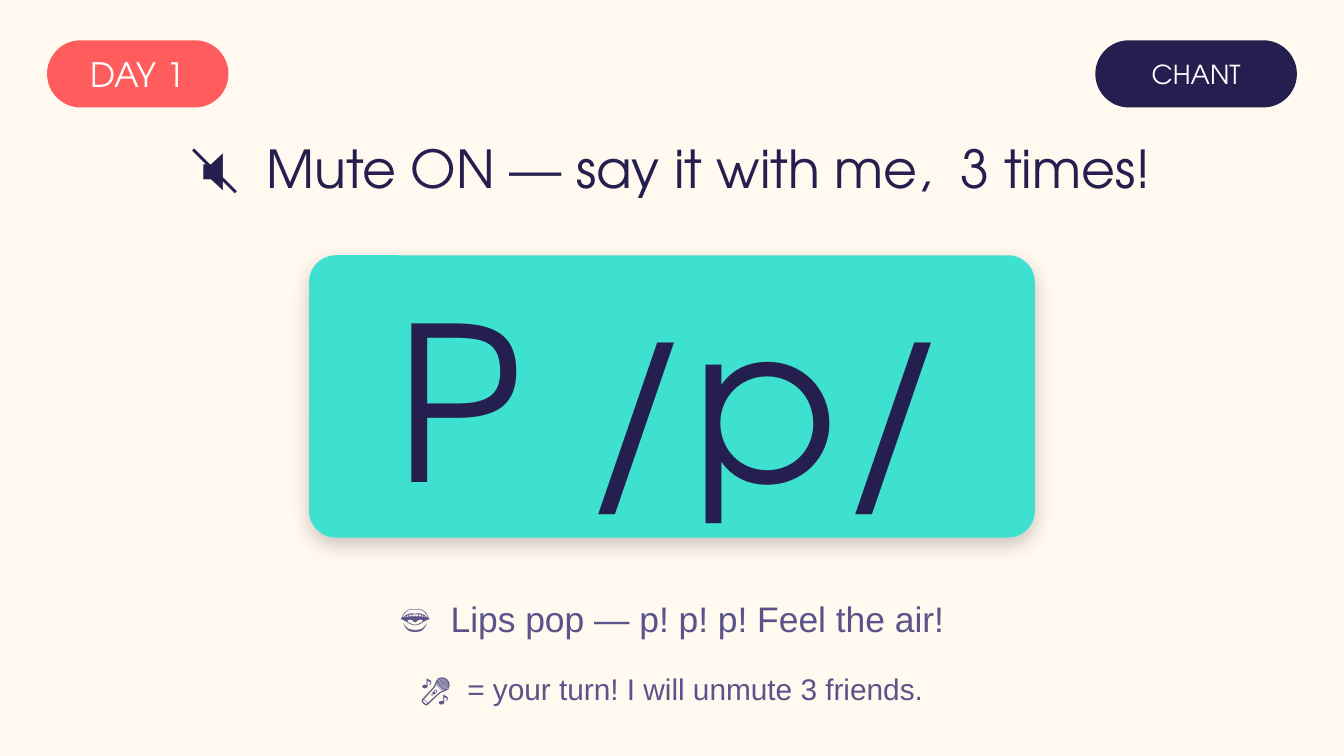
import pptx
import pptx.util
import pptx.oxml
import pptx.oxml.ns
from pptx.dml.color import RGBColor
from pptx.enum.shapes import MSO_SHAPE
from pptx.enum.text import MSO_ANCHOR, MSO_AUTO_SIZE, PP_ALIGN
from pptx.util import Inches

COLORS = {"cream": "FFF9EF", "coral": "FF5D5D", "navy": "241F4E",
          "teal": "3EE0CF", "violet": "5A548A", "white": "FFFFFF"}
HEAD, BODY = "TeX Gyre Adventor", "Arial"


def write(sp, text, font, size, color, inset=None):
    tf = sp.text_frame
    frame = {"word_wrap": True, "auto_size": MSO_AUTO_SIZE.NONE,
             "vertical_anchor": MSO_ANCHOR.MIDDLE}
    if inset is not None:
        for side in ("left", "top", "right", "bottom"):
            frame["margin_" + side] = Inches(inset)
    for name, value in frame.items():
        setattr(tf, name, value)
    p = tf.paragraphs[0]
    p.alignment = PP_ALIGN.CENTER
    r = p.add_run()
    r.text = text
    for name, value in {"name": font, "size": pptx.util.Pt(size), "bold": False}.items():
        setattr(r.font, name, value)
    r.font.color.rgb = RGBColor.from_string(COLORS[color])


# Widescreen 16:9 slide
prs = pptx.Presentation()
prs.slide_width = Inches(10)
prs.slide_height = Inches(10 * 9 / 16)
s = prs.slides.add_slide(prs.slide_layouts[5])
s.background.fill.solid()
s.background.fill.fore_color.rgb = RGBColor.from_string(COLORS["cream"])

# Title
title = s.shapes.title
place = {"left": 0, "top": 0.95, "width": 10, "height": 0.6}
for name, value in place.items():
    setattr(title, name, Inches(value))
write(title, "🔇  Mute ON — say it with me,  3 times!", HEAD, 28, "navy")

# Day and activity pills, then the sound card
cards = [
    ((0.35, 0.3, 1.35, 0.5), 0.5, "coral", "DAY 1", 18, "white"),
    ((8.15, 0.3, 1.5, 0.5), 0.5, "navy", "CHANT", 14, "white"),
    ((2.3, 1.9, 5.4, 2.1), 0.095, "teal", "P /p/", 115, "navy"),
]
for box, radius, fill, text, size, color in cards:
    sp = s.shapes.add_shape(MSO_SHAPE.ROUNDED_RECTANGLE, *map(Inches, box))
    sp.adjustments[0] = radius
    sp.shadow.inherit = False
    sp.fill.solid()
    sp.fill.fore_color.rgb = RGBColor.from_string(COLORS[fill])
    sp.line.fill.background()
    write(sp, text, HEAD, size, color, inset=0)

# Soft shadow under the sound card, the last one drawn
effects = sp._element.spPr.find(pptx.oxml.ns.qn("a:effectLst"))
effects.append(pptx.oxml.parse_xml(
    f'<a:outerShdw {pptx.oxml.ns.nsdecls("a")} blurRad="127000" dist="50800" '
    'dir="5400000" algn="ctr" rotWithShape="0"><a:srgbClr val="000000">'
    '<a:alpha val="20000"/></a:srgbClr></a:outerShdw>'))

# Hints
hints = [
    (4.35, 0.5, "👄  Lips pop — p! p! p! Feel the air!", 19),
    (4.9, 0.45, "🎤  = your turn! I will unmute 3 friends.", 16),
]
for top, height, text, size in hints:
    sp = s.shapes.add_textbox(0, Inches(top), prs.slide_width, Inches(height))
    write(sp, text, BODY, size, "violet")

prs.save("out.pptx")
